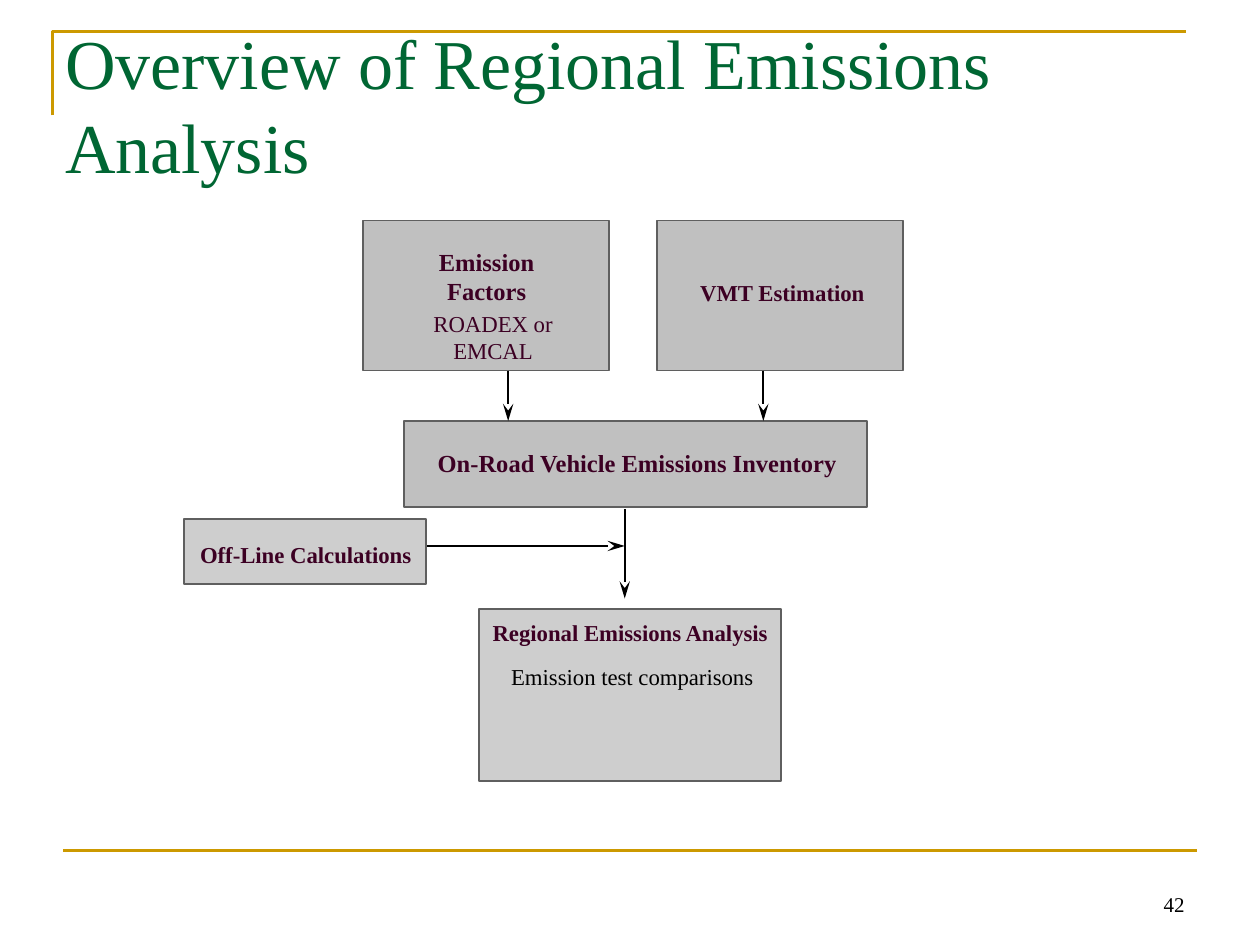
"""Build a flow chart slide on regional emissions analysis, on a grid of 120 columns by 90 rows."""
from dataclasses import dataclass

from lxml import etree
from pptx import Presentation
from pptx.dml.color import RGBColor
from pptx.enum.shapes import MSO_CONNECTOR, MSO_SHAPE
from pptx.enum.text import MSO_ANCHOR, MSO_AUTO_SIZE, PP_ALIGN
from pptx.oxml.ns import qn
from pptx.util import Inches, Pt

STRAIGHT = MSO_CONNECTOR.STRAIGHT
RECTANGLE = MSO_SHAPE.RECTANGLE
TOP, MIDDLE, BOTTOM = MSO_ANCHOR.TOP, MSO_ANCHOR.MIDDLE, MSO_ANCHOR.BOTTOM
NO_FIT, GROW = MSO_AUTO_SIZE.NONE, MSO_AUTO_SIZE.SHAPE_TO_FIT_TEXT
LEFT, CENTER, RIGHT = PP_ALIGN.LEFT, PP_ALIGN.CENTER, PP_ALIGN.RIGHT

GOLD = RGBColor(0xCC, 0x99, 0x00)
GREEN = RGBColor(0x00, 0x66, 0x33)
PLUM = RGBColor(0x3C, 0x00, 0x23)
BLACK = RGBColor(0x00, 0x00, 0x00)
SILVER = RGBColor(0xC0, 0xC0, 0xC0)
PALE = RGBColor(0xCE, 0xCE, 0xCE)
BORDER = RGBColor(0x5F, 0x5F, 0x5F)
FONT = "Times New Roman"

WIDTH, HEIGHT = Inches(10), Inches(7.5)
COLUMNS, ROWS = 120, 90


@dataclass(frozen=True)
class Area:
    """A rectangle in columns and rows."""
    column: float
    row: float
    columns: float
    rows: float

    def lengths(self) -> tuple:
        """Return left, top, width and height."""
        return (across(self.column), down(self.row),
                across(self.columns), down(self.rows))


@dataclass(frozen=True)
class Step:
    """A filled rectangle of the flow chart."""
    area: Area
    fill: RGBColor


@dataclass(frozen=True)
class Label:
    """Lines of text in one style."""
    area: Area
    lines: tuple
    size: float = 13
    bold: bool = True
    color: RGBColor = PLUM
    wrap: bool = False
    align: PP_ALIGN = CENTER
    anchor: MSO_ANCHOR = TOP
    fit: MSO_AUTO_SIZE = GROW


@dataclass(frozen=True)
class Line:
    """A straight line between two grid points."""
    start: tuple
    end: tuple
    color: RGBColor = BLACK
    weight: float = 1
    arrow: bool = True


STEPS = (
    Step(Area(34.6, 21, 23.4, 14.3), SILVER),
    Step(Area(62.6, 21, 23.4, 14.3), SILVER),
    Step(Area(38.5, 40.1, 44.1, 8.2), SILVER),
    Step(Area(17.5, 49.4, 23.1, 6.25), PALE),
    Step(Area(45.6, 58, 28.8, 16.4), PALE),
)
LABELS = (
    Label(Area(37.6, 22.9, 17.5, 6.7), ("Emission", "Factors"), size=14, wrap=True),
    Label(Area(38.6, 28.9, 16.7, 6.2), ("ROADEX or EMCAL",), bold=False, wrap=True),
    Label(Area(65.5, 26, 18, 3.7), ("VMT Estimation",)),
    Label(Area(40.2, 42.1, 41, 3.8), ("On-Road Vehicle Emissions Inventory",), size=14),
    Label(Area(17.1, 50.9, 24, 3.7), ("Off-Line Calculations",)),
    Label(Area(45.2, 58.3, 29.6, 3.7), ("Regional Emissions Analysis",)),
    Label(Area(46.7, 62.5, 27, 3.7), ("Emission test comparisons",), bold=False, color=BLACK),
    Label(Area(86, 81.9, 28, 6), ("42",), size=12, bold=False, color=BLACK,
          wrap=True, align=RIGHT, anchor=BOTTOM, fit=NO_FIT),
)
LINES = (
    Line((6, 81), (114, 81), GOLD, 1.5, arrow=False),
    Line((48.4, 35.3), (48.4, 40.1)),
    Line((72.7, 35.3), (72.7, 40.1)),
    Line((40.7, 52), (59.5, 52)),
    Line((59.5, 48.5), (59.5, 57)),
)
TITLE = Label(Area(5, 3.7, 111, 12.4), ("Overview of Regional Emissions Analysis",),
              size=40, bold=False, color=GREEN, wrap=True,
              align=LEFT, anchor=MIDDLE, fit=NO_FIT)
BRACKET = ((5, 11), (5, 3), (113, 3))


def across(columns: float) -> int:
    """Turn columns into a length."""
    return round(WIDTH * columns / COLUMNS)


def down(rows: float) -> int:
    """Turn rows into a length."""
    return round(HEIGHT * rows / ROWS)


def write(box, label: Label) -> None:
    """Place a text shape and fill it with the label's lines."""
    box.left, box.top, box.width, box.height = label.area.lengths()
    frame = box.text_frame
    frame.word_wrap = label.wrap
    frame.auto_size = label.fit
    frame.vertical_anchor = label.anchor
    for index, line in enumerate(label.lines):
        para = frame.add_paragraph() if index else frame.paragraphs[0]
        para.alignment = label.align
        span = para.add_run()
        span.text = line
        span.font.name = FONT
        span.font.size = Pt(label.size)
        span.font.bold = label.bold
        span.font.color.rgb = label.color


def draw_step(page, step: Step) -> None:
    """Draw a bordered rectangle."""
    box = page.shapes.add_shape(RECTANGLE, *step.area.lengths())
    box.shadow.inherit = False
    box.fill.solid()
    box.fill.fore_color.rgb = step.fill
    box.line.color.rgb = BORDER
    box.line.width = Pt(1)


def draw_line(page, line: Line) -> None:
    """Draw a straight line, with a stealth head if it is an arrow."""
    connector = page.shapes.add_connector(
        STRAIGHT, across(line.start[0]), down(line.start[1]),
        across(line.end[0]), down(line.end[1]))
    connector.line.color.rgb = line.color
    connector.line.width = Pt(line.weight)
    if line.arrow:
        etree.SubElement(connector.get_or_add_ln(), qn("a:tailEnd"),
                         type="stealth", w="med", len="lg")
    etree.SubElement(connector._element.spPr, qn("a:effectLst"))


def draw_bracket(page) -> None:
    """Draw the open corner around the title."""
    start, *others = [(across(column), down(row)) for column, row in BRACKET]
    builder = page.shapes.build_freeform(*start)
    builder.add_line_segments(others, close=False)
    bracket = builder.convert_to_shape()
    bracket.shadow.inherit = False
    bracket.fill.background()
    bracket.line.color.rgb = GOLD
    bracket.line.width = Pt(1.5)


def main() -> None:
    """Build and save the deck."""
    deck = Presentation()
    deck.slide_width, deck.slide_height = WIDTH, HEIGHT
    page = deck.slides.add_slide(deck.slide_layouts[5])
    draw_bracket(page)
    write(page.shapes.title, TITLE)
    for step in STEPS:
        draw_step(page, step)
    for label in LABELS:
        write(page.shapes.add_textbox(*label.area.lengths()), label)
    for line in LINES:
        draw_line(page, line)
    deck.save("out.pptx")


if __name__ == "__main__":
    main()
